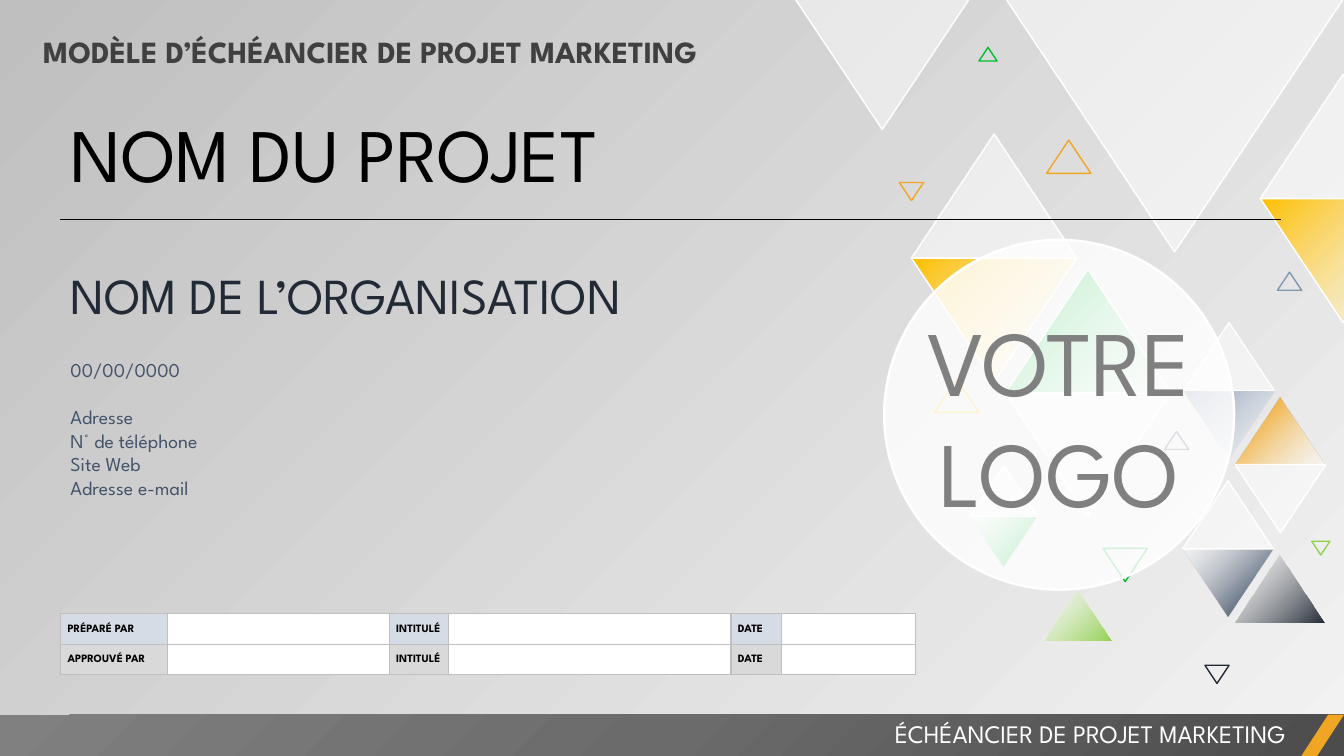
"""Build the cover slide of a marketing project schedule template."""
import pptx
import pptx.dml.color
import pptx.enum.shapes
import pptx.enum.text
import pptx.oxml
import pptx.oxml.ns
import pptx.util
from lxml import etree

Inches, Pt = pptx.util.Inches, pptx.util.Pt
RGBColor = pptx.dml.color.RGBColor
Shape = pptx.enum.shapes.MSO_SHAPE
Align = pptx.enum.text.PP_ALIGN
Anchor = pptx.enum.text.MSO_ANCHOR
qn = pptx.oxml.ns.qn

FONT = "League Spartan"
WHITE = RGBColor(0xFF, 0xFF, 0xFF)
BLACK = RGBColor(0x00, 0x00, 0x00)
PALE = RGBColor(0xF2, 0xF2, 0xF2)
SILVER = RGBColor(0xBF, 0xBF, 0xBF)
LIGHT_GREY = RGBColor(0xD9, 0xD9, 0xD9)
LIGHT_BLUE = RGBColor(0xD6, 0xDC, 0xE5)
GREY = RGBColor(0x80, 0x80, 0x80)
MID_GREY = RGBColor(0x6B, 0x6B, 0x6B)
DARK_GREY = RGBColor(0x4C, 0x4C, 0x4C)
CHARCOAL = RGBColor(0x40, 0x40, 0x40)
NAVY = RGBColor(0x22, 0x2A, 0x35)
SLATE = RGBColor(0x44, 0x54, 0x6A)
STEEL = RGBColor(0x84, 0x97, 0xB0)
YELLOW = RGBColor(0xFF, 0xC0, 0x00)
ORANGE = RGBColor(0xF0, 0xA6, 0x22)
GREEN = RGBColor(0x00, 0xBD, 0x32)
LIME = RGBColor(0x92, 0xD0, 0x50)

HEADING = "MODÈLE D’ÉCHÉANCIER DE PROJET MARKETING"
PROJECT = "NOM DU PROJET"
FOOTER = "ÉCHÉANCIER DE PROJET MARKETING"
LOGO = ["VOTRE", "LOGO"]
CONTACT = [  # text, size, colour, space before
    ("NOM DE L’ORGANISATION", 36, NAVY, 0),
    ("00/00/0000", 14, SLATE, 24),
    ("Adresse", 14, SLATE, 16.8),
    ("N° de téléphone", 14, SLATE, 0),
    ("Site Web", 14, SLATE, 0),
    ("Adresse e-mail", 14, SLATE, 0),
]
APPROVALS = [
    (["PRÉPARÉ PAR", "", "INTITULÉ", "", "DATE", ""], LIGHT_BLUE),
    (["APPROUVÉ PAR", "", "INTITULÉ", "", "DATE", ""], LIGHT_GREY),
]
COLUMN_WIDTHS = [1.06, 2.2, 0.59, 2.8, 0.5, 1.33]
ROW_HEIGHT = 0.3

GLASS = [(0, WHITE, 50)]


def fading_out(color):
    return [(0, color, 100), (100, WHITE, 50)]


def fading_in(color):
    return [(0, WHITE, 50), (82, color, 100)]


UP, DOWN = 0, 180
TRIANGLE_RATIO = 0.75
TRIANGLES = [  # left, top, width, direction, fill stops, line colour
    (9.04, 1.33, 1.64, UP, GLASS, WHITE),
    (9.04, 2.56, 1.64, DOWN, fading_out(YELLOW), WHITE),
    (9.97, 2.67, 1.64, UP, fading_in(GREEN), WHITE),
    (9.97, 3.9, 1.64, DOWN, GLASS, WHITE),
    (9.97, -0.02, 3.36, DOWN, GLASS, WHITE),
    (12.24, 5.5, 0.9, UP, fading_out(NAVY), None),
    (11.73, 5.44, 0.9, DOWN, fading_in(SLATE), None),
    (11.73, 4.77, 0.9, UP, GLASS, WHITE),
    (11.74, 3.2, 0.9, UP, GLASS, WHITE),
    (11.74, 3.88, 0.9, DOWN, fading_out(STEEL), None),
    (12.25, 3.94, 0.9, UP, fading_in(ORANGE), None),
    (12.25, 4.61, 0.9, DOWN, GLASS, WHITE),
    (10.35, 5.85, 0.67, UP, fading_out(LIME), None),
    (9.62, 5.12, 0.67, DOWN, fading_in(GREEN), None),
    (9.62, 4.62, 0.67, UP, GLASS, WHITE),
    (12.5, 0.74, 1.64, UP, GLASS, WHITE),
    (12.5, 1.97, 1.64, DOWN, fading_out(YELLOW), WHITE),
    (10.94, 5.44, 0.44, DOWN, None, GREEN),
    (9.27, 3.76, 0.44, UP, None, YELLOW),
    (11.55, 4.28, 0.24, UP, None, SLATE),
    (11.95, 6.6, 0.24, DOWN, None, NAVY),
    (8.92, 1.81, 0.24, DOWN, None, ORANGE),
    (12.67, 2.7, 0.24, UP, None, STEEL),
    (9.71, 0.47, 0.18, UP, None, GREEN),
    (13.01, 5.37, 0.18, DOWN, None, LIME),
    (10.38, 1.39, 0.44, UP, None, ORANGE),
    (7.88, -0.02, 1.74, DOWN, GLASS, WHITE),
]
DIAGONAL = '<a:lin ang="13500000" scaled="0"/>'
CORNER = '<a:path path="circle"><a:fillToRect l="100000" t="100000"/></a:path>'


def paint(owner, stops, direction=DIAGONAL):
    if not stops:
        owner.fill.background()
        return
    fill = owner.fill
    fill.solid()
    fill.fore_color.rgb = stops[0][1]
    solid = owner.element.xpath("./p:spPr/a:solidFill | ./p:bg/p:bgPr/a:solidFill")[0]
    colors = [f'<a:srgbClr val="{color}"><a:alpha val="{alpha * 1000}"/></a:srgbClr>'
              for _, color, alpha in stops]
    namespace = pptx.oxml.ns.nsdecls("a")
    if len(stops) == 1:
        xml = f"<a:solidFill {namespace}>{colors[0]}</a:solidFill>"
    else:
        marks = "".join(f'<a:gs pos="{stop[0] * 1000}">{color}</a:gs>'
                        for stop, color in zip(stops, colors))
        xml = (f'<a:gradFill {namespace} rotWithShape="1"><a:gsLst>{marks}</a:gsLst>'
               f"{direction}</a:gradFill>")
    solid.getparent().replace(solid, pptx.oxml.parse_xml(xml))


def add_shape(kind, box, stops, line=None, line_width=1, direction=DIAGONAL):
    shape = slide.shapes.add_shape(kind, *map(Inches, box))
    shape.shadow.inherit = False
    paint(shape, stops, direction)
    if line is None:
        shape.line.fill.background()
    else:
        shape.line.color.rgb = line
        shape.line.width = Pt(line_width)
    return shape


def style(paragraph, size, color, bold=False, align=Align.LEFT):
    paragraph.alignment = align
    for run in paragraph.runs:
        run.font.name, run.font.size, run.font.bold = FONT, Pt(size), bold
        run.font.color.rgb = color


def add_text(box, text, *look, **options):
    frame = slide.shapes.add_textbox(*map(Inches, box)).text_frame
    frame.word_wrap = True
    frame.text = text
    for paragraph in frame.paragraphs:
        style(paragraph, *look, **options)
    return frame


def format_cell(cell, text, color):
    cell.margin_left = cell.margin_right = Inches(0.07)
    cell.margin_top = cell.margin_bottom = 0
    cell.vertical_anchor = Anchor.MIDDLE
    cell.text = text
    paragraph = cell.text_frame.paragraphs[0]
    style(paragraph, 8, BLACK, bold=True)
    paragraph.line_spacing = 1.07
    if not text:
        etree.SubElement(paragraph._p, qn("a:endParaRPr"), sz="800")
    properties = cell._tc.get_or_add_tcPr()
    for side in ("a:lnL", "a:lnR", "a:lnT", "a:lnB"):
        border = etree.SubElement(properties, qn(side), w=str(Pt(1)))
        solid = etree.SubElement(border, qn("a:solidFill"))
        etree.SubElement(solid, qn("a:srgbClr"), val=str(SILVER))
    cell.fill.solid()
    cell.fill.fore_color.rgb = color if text else WHITE


presentation = pptx.Presentation()
presentation.slide_width, presentation.slide_height = Inches(13.33), Inches(7.5)
slide = presentation.slides.add_slide(presentation.slide_layouts[5])
paint(slide.background, [(0, PALE, 40), (100, SILVER, 100)])

for left, top, width, direction, stops, line in TRIANGLES:
    box = (left, top, width, width * TRIANGLE_RATIO)
    add_shape(Shape.ISOSCELES_TRIANGLE, box, stops, line).rotation = direction

add_text((0.33, 0.28, 8.61, 0.47), HEADING, 22, CHARCOAL, bold=True)
add_shape(Shape.RECTANGLE, (0, 7.09, 13.33, 0.41),
          [(0, DARK_GREY, 100), (50, MID_GREY, 100), (100, GREY, 100)], direction=CORNER)
stripe = add_shape(Shape.PARALLELOGRAM, (12.9, 7.09, 0.43, 0.42), [(0, ORANGE, 100)])
stripe.adjustments[0] = 0.65
add_text((5.25, 7.08, 7.6, 0.4), FOOTER, 18, WHITE, align=Align.RIGHT)

title = slide.shapes.title
title.left, title.top, title.width, title.height = map(Inches, (0.6, 1.01, 12.27, 1.01))
title.text_frame.text = PROJECT
title.text_frame.vertical_anchor = Anchor.TOP
title.text_frame.auto_size = pptx.enum.text.MSO_AUTO_SIZE.NONE
style(title.text_frame.paragraphs[0], 54, BLACK)

contact = add_text((0.6, 2.57, 7.81, 2.46), "\n".join(row[0] for row in CONTACT), 14, SLATE)
for paragraph, (_, size, color, gap) in zip(contact.paragraphs, CONTACT):
    style(paragraph, size, color)
    paragraph.space_before = Pt(gap)

rule = slide.shapes.add_connector(pptx.enum.shapes.MSO_CONNECTOR.STRAIGHT,
                                  *map(Inches, (0.6, 2.18, 12.71, 2.18)))
rule.line.color.rgb, rule.line.width = BLACK, Pt(0.5)
etree.SubElement(rule._element.spPr, qn("a:effectLst"))

badge = add_shape(Shape.OVAL, (8.77, 2.38, 3.47, 3.47), [(0, WHITE, 81)], WHITE, 1.75).text_frame
badge.margin_left = badge.margin_right = badge.margin_top = badge.margin_bottom = 0
badge.word_wrap, badge.vertical_anchor = False, Anchor.MIDDLE
badge.text = "\n".join(LOGO)
for paragraph in badge.paragraphs:
    style(paragraph, 66, GREY, align=Align.CENTER)

table = slide.shapes.add_table(
    len(APPROVALS), len(COLUMN_WIDTHS), Inches(0.6), Inches(6.09),
    Inches(sum(COLUMN_WIDTHS)), Inches(ROW_HEIGHT * len(APPROVALS))).table
table.first_row = table.horz_banding = False
for column, width in zip(table.columns, COLUMN_WIDTHS):
    column.width = Inches(width)
for row, (labels, color) in zip(table.rows, APPROVALS):
    row.height = Inches(ROW_HEIGHT)
    for cell, label in zip(row.cells, labels):
        format_cell(cell, label, color)

presentation.save("out.pptx")
